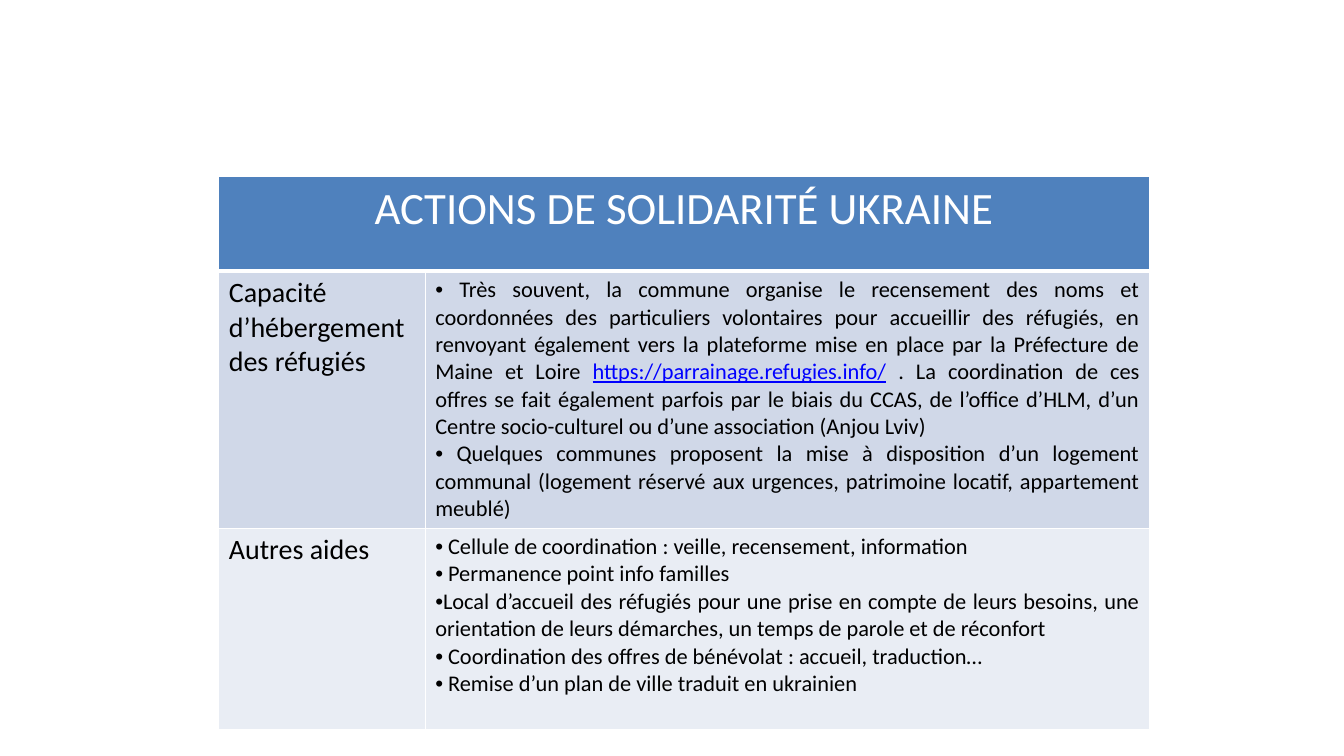
from dataclasses import dataclass
from lxml.etree import SubElement as Sub
from pptx import Presentation
from pptx.dml.color import RGBColor as RGB
from pptx.enum.text import PP_ALIGN as Align
from pptx.oxml.ns import qn
from pptx.util import Pt


@dataclass(frozen=True)
class Theme:
    font: str = "Calibri"
    head: str = "4F81BD"
    dark: str = "D0D8E8"
    light: str = "E9EDF4"
    white: str = "FFFFFF"
    black: str = "000000"
    link: str = "0000FF"
    title: int = 32
    label: int = 20
    body: int = 16


def paint(cell, fill, top, base):
    props = cell._tc.get_or_add_tcPr()
    for side, width in (("L", 1), ("R", 1), ("T", top), ("B", base)):
        line = Sub(props, qn(f"a:ln{side}"), w=str(Pt(width)))
        Sub(Sub(line, qn("a:solidFill")), qn("a:srgbClr"), val=theme.white)
    cell.fill.solid()
    cell.fill.fore_color.rgb = RGB.from_string(fill)


def write(para, text, size, color, align):
    para.text = text
    para.alignment = align
    font = para.font
    font.name, font.size, font.bold = theme.font, Pt(size), False
    font.color.rgb = RGB.from_string(color)


theme = Theme()
url = "https://parrainage.refugies.info/"
topics = [
    ("Capacité d’hébergement des réfugiés", theme.dark, [
        " Très souvent, la commune organise le recensement des noms et "
        "coordonnées des particuliers volontaires pour accueillir des réfugiés, "
        "en renvoyant également vers la plateforme mise en place par la "
        f"Préfecture de Maine et Loire {url} . La coordination de ces offres se "
        "fait également parfois par le biais du CCAS, de l’office d’HLM, d’un "
        "Centre socio-culturel ou d’une association (Anjou Lviv)",
        " Quelques communes proposent la mise à disposition d’un logement "
        "communal (logement réservé aux urgences, patrimoine locatif, "
        "appartement meublé)",
    ]),
    ("Autres aides", theme.light, [
        " Cellule de coordination : veille, recensement, information",
        " Permanence point info familles",
        "Local d’accueil des réfugiés pour une prise en compte de leurs besoins, "
        "une orientation de leurs démarches, un temps de parole et de réconfort",
        " Coordination des offres de bénévolat : accueil, traduction…",
        " Remise d’un plan de ville traduit en ukrainien",
    ]),
]

deck = Presentation()
deck.slide_width, deck.slide_height = Pt(960), Pt(540)
slide = deck.slides.add_slide(deck.slide_layouts[6])

widths, heights = (147.5, 517.5), (67.5, 183.5, 144)
frame = slide.shapes.add_table(3, 2, Pt(156.25), Pt(126.25),
                               Pt(sum(widths)), Pt(sum(heights)))
table = frame.table
for col, width in zip(table.columns, widths):
    col.width = Pt(width)
for row, height in zip(table.rows, heights):
    row.height = Pt(height)

head = table.cell(0, 0)
head.merge(table.cell(0, 1))
for cell in table.rows[0].cells:
    paint(cell, theme.head, 1, 3)
write(head.text_frame.paragraphs[0], "ACTIONS DE SOLIDARITÉ UKRAINE",
      theme.title, theme.white, Align.CENTER)

for num, (name, fill, items) in enumerate(topics, 1):
    label, body = table.rows[num].cells
    for cell in (label, body):
        paint(cell, fill, 3 if num == 1 else 1, 1)
    write(label.text_frame.paragraphs[0], name, theme.label, theme.black, Align.LEFT)
    for pos, item in enumerate(items):
        box = body.text_frame
        para = box.add_paragraph() if pos else box.paragraphs[0]
        props = para._p.get_or_add_pPr()
        props.set("marL", "0")
        props.set("indent", "0")
        Sub(props, qn("a:buFont"), typeface="Arial")
        Sub(props, qn("a:buChar"), char="•")
        start, mark, rest = item.partition(url)
        write(para, start, theme.body, theme.black, Align.JUSTIFY)
        if mark:
            link = para.add_run()
            link.text = mark
            link.font.underline = True
            link.font.color.rgb = RGB.from_string(theme.link)
            para.add_run().text = rest

deck.save("out.pptx")
